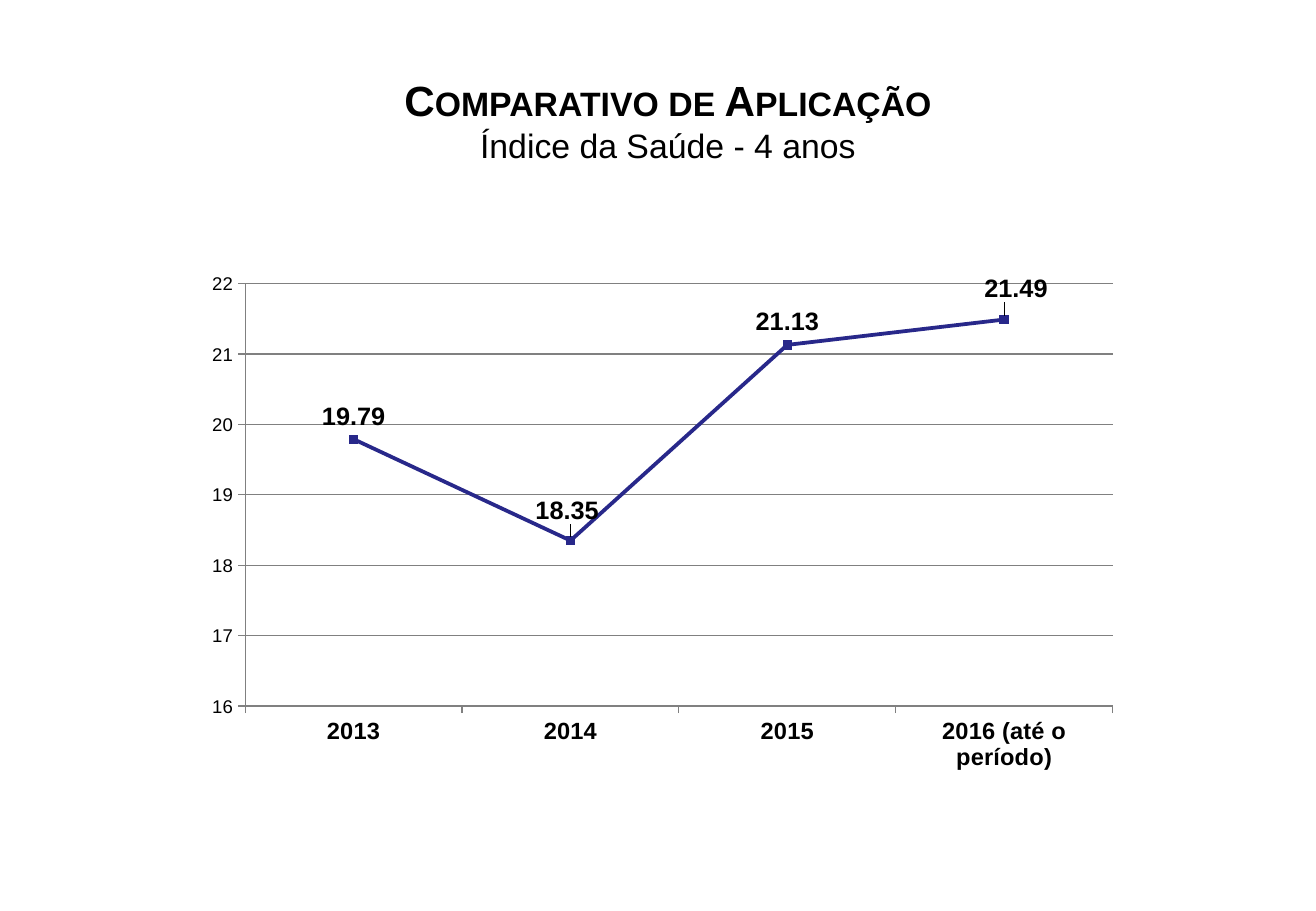
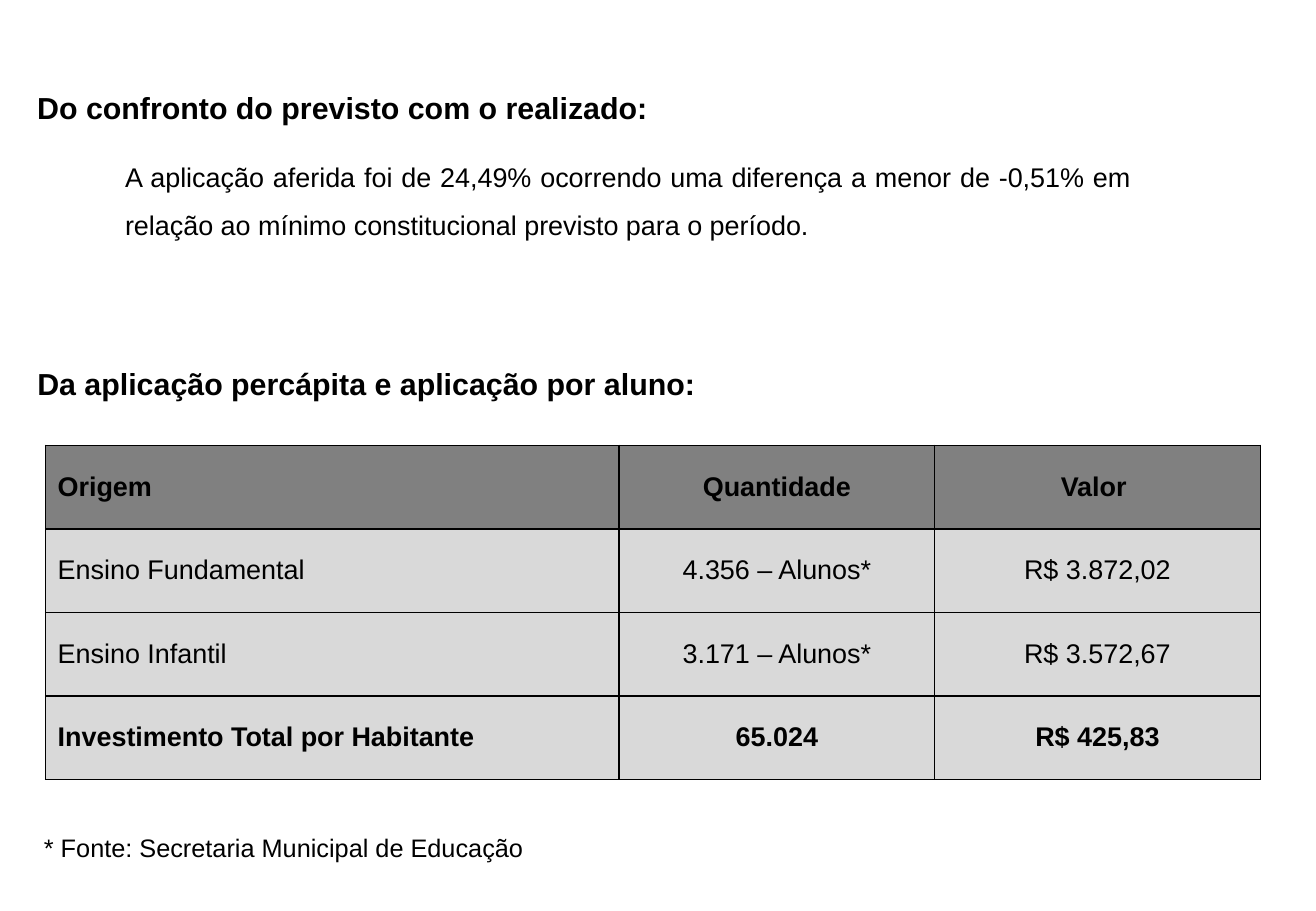
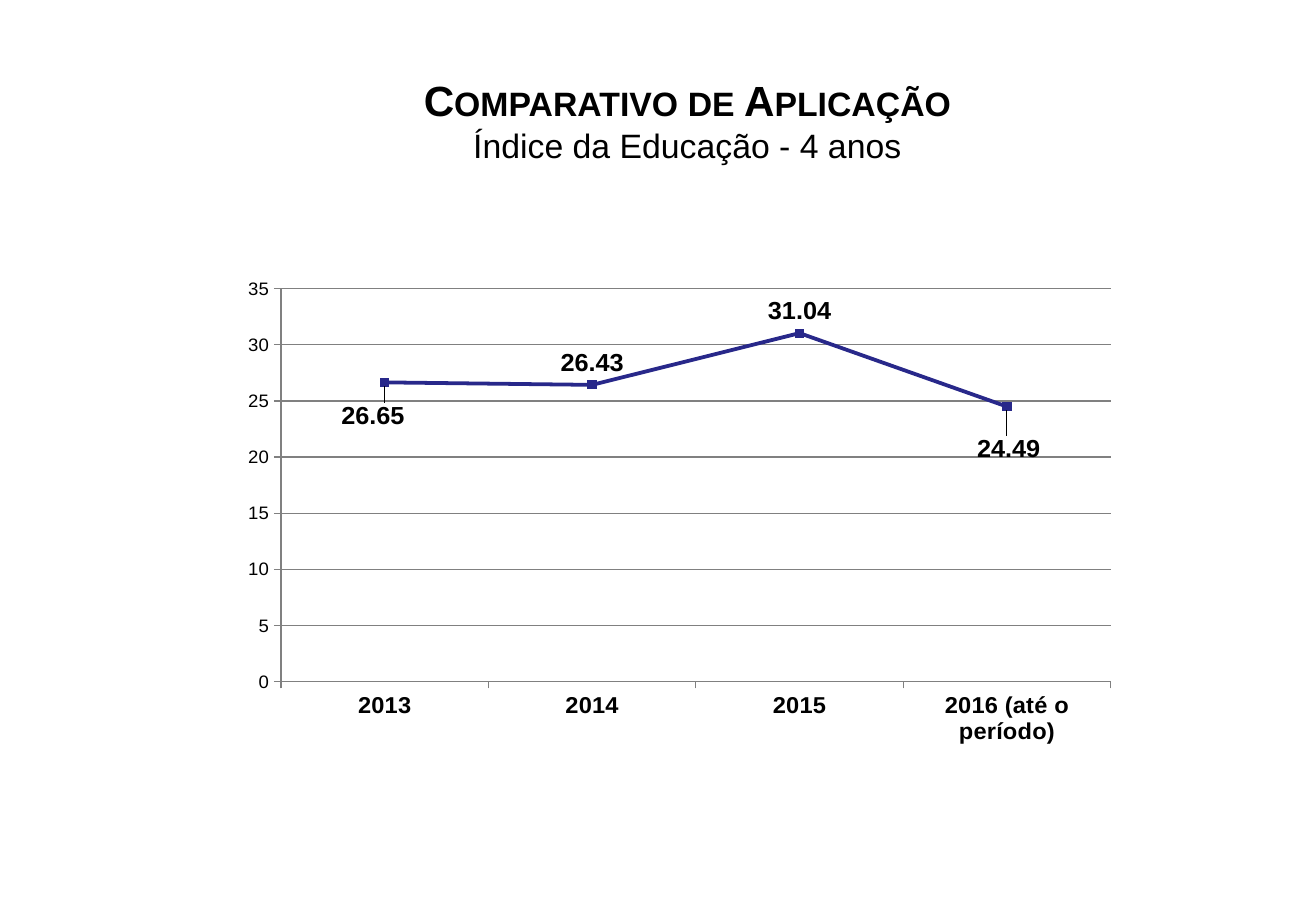
from copy import deepcopy

from pptx import Presentation
from pptx.chart.data import CategoryChartData
from pptx.dml.color import RGBColor
from pptx.enum.chart import XL_CHART_TYPE, XL_LABEL_POSITION as Pos, XL_MARKER_STYLE, XL_TICK_MARK
from pptx.enum.text import MSO_ANCHOR as Anchor, MSO_AUTO_SIZE as AutoSize, PP_ALIGN as Align
from pptx.oxml import parse_xml
from pptx.oxml.ns import nsdecls, qn
from pptx.util import Pt

FONT = "Arial"
BLACK, NAVY, GRID_GREY = "000000", "28288A", "808080"
HEADER_GREY, ROW_GREY = "808080", "D9D9D9"

# Content
HEADING = "Comparativo de Aplicação"
YEARS = ["2013", "2014", "2015", "2016 (até o período)"]
# moved labels: point index -> (position, right, down)
HEALTH = dict(
    subtitle="Índice da Saúde - 4 anos", title_left=187,
    values=[19.79, 18.35, 21.13, 21.49], scale=(16, 22, 1),
    box=(116, 160.5, 553.5, 296.5), plot=(0.053, 0.026, 0.929, 0.849),
    moved={1: (Pos.ABOVE, -2, -4), 3: (Pos.ABOVE, 7, -5)})
EDUCATION = dict(
    subtitle="Índice da Educação - 4 anos", title_left=198.5,
    values=[26.65, 26.43, 31.04, 24.49], scale=(0, 35, 5),
    box=(139, 160.5, 530.5, 281), plot=(0.052, 0.039, 0.927, 0.853),
    moved={0: (Pos.BELOW, -7, 7), 3: (Pos.BELOW, 1, 12)})

# text, box, size, bold, alignment, line spacing, wrap, anchor
TEXTS = [
    ("Do confronto do previsto com o realizado:",
     (15, 49, 380, 29), 18, True, Align.LEFT, 1, False, Anchor.TOP),
    ("A aplicação aferida foi de 24,49% ocorrendo uma diferença a menor de -0,51% "
     "em relação ao mínimo constitucional previsto para o período.",
     (67, 81.5, 610.5, 65.5), 16, False, Align.JUSTIFY, 1.5, True, Anchor.MIDDLE),
    ("Da aplicação percápita e aplicação por aluno:",
     (15, 213, 408, 29), 18, True, Align.LEFT, 1, False, Anchor.TOP),
    ("* Fonte: Secretaria Municipal de Educação",
     (19, 489.5, 512, 25), 15, False, Align.JUSTIFY, 1, True, Anchor.TOP),
]
SPENDING = [
    ("Origem", "Quantidade", "Valor "),
    ("Ensino Fundamental", "4.356 – Alunos*", "R$ 3.872,02"),
    ("Ensino Infantil", "3.171 – Alunos*", "R$ 3.572,67"),
    ("Investimento Total por Habitante", "65.024", "R$ 425,83"),
]
COLUMN_WIDTHS, ROW_HEIGHT = (340, 187, 193), 49.5
TABLE_LEFT, TABLE_TOP = 27, 264


def color(hex_code):
    return RGBColor.from_string(hex_code)


def style(font, size, bold=False):
    font.name, font.size, font.bold = FONT, Pt(size), bold
    font.color.rgb = color(BLACK)


def points(lengths):
    return [Pt(length) for length in lengths]


def add_title(slide, subtitle, left):
    title = slide.shapes.title
    title.left, title.top, title.width, title.height = points((left, 26, 418, 90))
    frame = title.text_frame
    frame.text = HEADING + "\v" + subtitle
    frame.auto_size, frame.vertical_anchor = AutoSize.NONE, Anchor.MIDDLE
    paragraph = frame.paragraphs[0]
    paragraph.alignment = Align.CENTER
    heading, second = paragraph.runs
    style(heading.font, 25, True)
    style(second.font, 20)
    heading_props = heading.font._element
    heading_props.set("cap", "small")
    # The line break takes the size of the heading
    paragraph._p.find(qn("a:br")).append(deepcopy(heading_props))


def set_layout(plot_area, x, y, width, height):
    old = plot_area.find(qn("c:layout"))
    if old is not None:
        plot_area.remove(old)
    plot_area.insert(0, parse_xml(
        f'<c:layout {nsdecls("c")}><c:manualLayout><c:layoutTarget val="inner"/>'
        '<c:xMode val="edge"/><c:yMode val="edge"/>'
        f'<c:x val="{x}"/><c:y val="{y}"/><c:w val="{width}"/><c:h val="{height}"/>'
        '</c:manualLayout></c:layout>'))


def move_label(series, index, position, right, down, box):
    label = series.points[index].data_label
    style(label.font, 15, True)
    label.position = position
    entry = next(e for e in series._element.iter(qn("c:dLbl"))
                 if e.find(qn("c:idx")).get("val") == str(index))
    entry.find(qn("c:idx")).addnext(parse_xml(
        f'<c:layout {nsdecls("c")}><c:manualLayout>'
        f'<c:x val="{right / box[2]:.4f}"/><c:y val="{down / box[3]:.4f}"/>'
        '</c:manualLayout></c:layout>'))


def add_index_chart(slide, values, scale, box, plot, moved):
    data = CategoryChartData()
    data.categories = YEARS
    data.add_series("Series 1", values)
    chart = slide.shapes.add_chart(XL_CHART_TYPE.LINE_MARKERS, *points(box), data).chart
    chart.has_legend = chart.has_title = False
    style(chart.font, 18)
    set_layout(chart._chartSpace.chart.plotArea, *plot)

    # Axes
    value_axis, year_axis = chart.value_axis, chart.category_axis
    value_axis.minimum_scale, value_axis.maximum_scale, value_axis.major_unit = scale
    value_axis.has_major_gridlines = True
    style(value_axis.tick_labels.font, 11)
    style(year_axis.tick_labels.font, 14, True)
    for axis in (value_axis, year_axis):
        axis.major_tick_mark = XL_TICK_MARK.OUTSIDE
    for line in (value_axis.format.line, year_axis.format.line,
                 value_axis.major_gridlines.format.line):
        line.color.rgb, line.width = color(GRID_GREY), Pt(0.75)

    # Line, markers and labels
    chart.plots[0].vary_by_categories = False
    series = chart.plots[0].series[0]
    series.smooth = False
    series.format.line.color.rgb, series.format.line.width = color(NAVY), Pt(2.25)
    marker = series.marker
    marker.style, marker.size = XL_MARKER_STYLE.SQUARE, 5
    marker.format.fill.solid()
    marker.format.fill.fore_color.rgb = color(NAVY)
    marker.format.line.color.rgb = color(NAVY)
    labels = series.data_labels
    labels.show_value, labels.position = True, Pos.ABOVE
    style(labels.font, 15, True)
    for index, move in moved.items():
        move_label(series, index, *move, box)


def add_index_slide(prs, subtitle, title_left, **chart):
    slide = prs.slides.add_slide(prs.slide_layouts[5])
    add_title(slide, subtitle, title_left)
    add_index_chart(slide, **chart)


def add_text(slide, text, box, size, bold, align, spacing, wrap, anchor):
    frame = slide.shapes.add_textbox(*points(box)).text_frame
    frame.text = text
    frame.word_wrap, frame.auto_size = wrap, AutoSize.SHAPE_TO_FIT_TEXT
    frame.vertical_anchor = anchor
    paragraph = frame.paragraphs[0]
    paragraph.alignment, paragraph.line_spacing = align, spacing
    style(paragraph.runs[0].font, size, bold)


def format_cell(cell, text, fill, bold, align):
    cell.text = text
    cell.vertical_anchor = Anchor.MIDDLE
    paragraph = cell.text_frame.paragraphs[0]
    paragraph.alignment = align
    props = paragraph._p.get_or_add_pPr()
    props.set("marL", str(Pt(27)))
    props.set("indent", str(-Pt(27)))
    style(paragraph.runs[0].font, 16, bold)
    cell_props = cell._tc.get_or_add_tcPr()
    for side in ("lnL", "lnR", "lnT", "lnB"):
        cell_props.append(parse_xml(
            f'<a:{side} {nsdecls("a")} w="{Pt(1)}"><a:solidFill>'
            f'<a:srgbClr val="{BLACK}"/></a:solidFill></a:{side}>'))
    cell.fill.solid()
    cell.fill.fore_color.rgb = color(fill)


def add_spending_table(slide):
    rows = len(SPENDING)
    table = slide.shapes.add_table(
        rows, len(COLUMN_WIDTHS),
        *points((TABLE_LEFT, TABLE_TOP, sum(COLUMN_WIDTHS), rows * ROW_HEIGHT))).table
    for column, width in zip(table.columns, COLUMN_WIDTHS):
        column.width = Pt(width)
    for r, entries in enumerate(SPENDING):
        table.rows[r].height = Pt(ROW_HEIGHT)
        for c, text in enumerate(entries):
            format_cell(table.cell(r, c), text,
                        ROW_GREY if r else HEADER_GREY,
                        r in (0, rows - 1),
                        Align.CENTER if c else Align.LEFT)


def add_spending_slide(prs):
    slide = prs.slides.add_slide(prs.slide_layouts[6])
    for text in TEXTS:
        add_text(slide, *text)
    add_spending_table(slide)


def main():
    prs = Presentation()
    prs.slide_width, prs.slide_height = Pt(780), Pt(540)
    add_index_slide(prs, **HEALTH)
    add_spending_slide(prs)
    add_index_slide(prs, **EDUCATION)
    prs.save("out.pptx")


if __name__ == "__main__":
    main()
